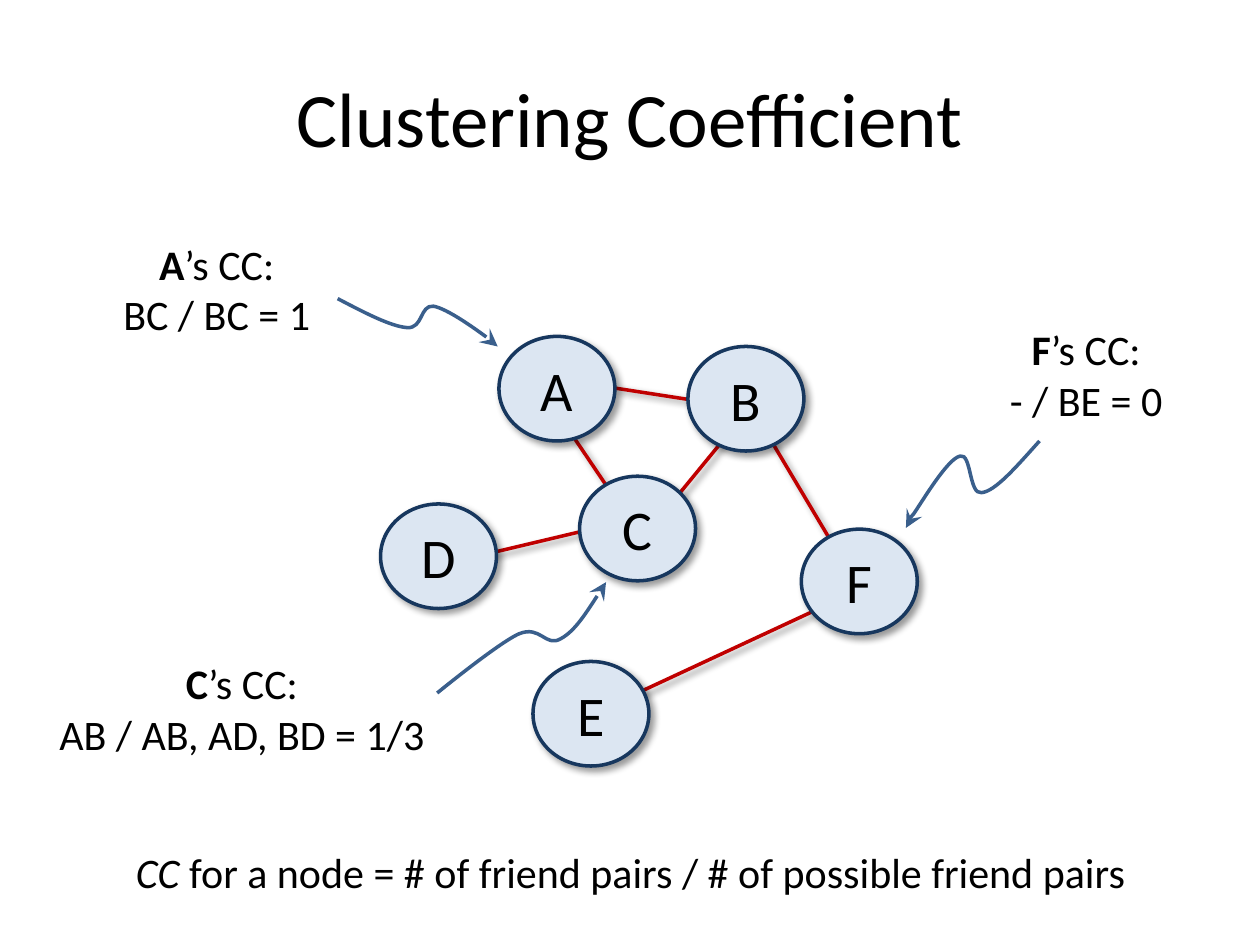
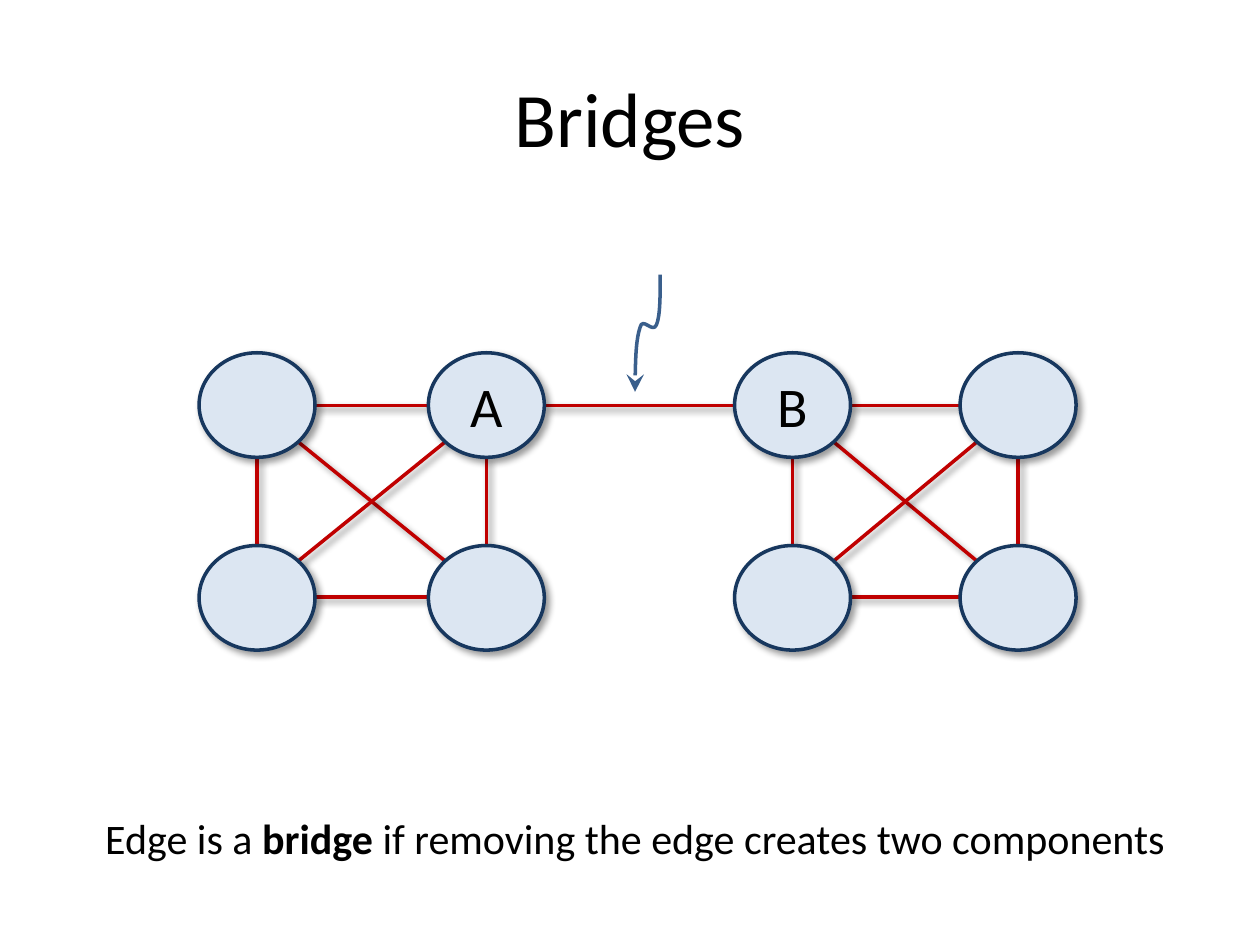
from dataclasses import dataclass
from itertools import combinations

from pptx import Presentation
from pptx.dml.color import RGBColor
from pptx.enum.shapes import MSO_CONNECTOR, MSO_SHAPE
from pptx.enum.text import MSO_ANCHOR, PP_ALIGN
from pptx.oxml import parse_xml
from pptx.oxml.ns import nsdecls, qn
from pptx.slide import Slide
from pptx.util import Pt

PX = 9144
SLIDE_WIDTH, SLIDE_HEIGHT = 1000, 750
NODE_WIDTH, NODE_HEIGHT = 92, 83
DIAGONAL = 0.707
FONT = "Calibri"
LINE_WIDTH = Pt(2)

WHITE = RGBColor(0xFF, 0xFF, 0xFF)
BLACK = RGBColor(0x00, 0x00, 0x00)
NODE_FILL = RGBColor(0xDC, 0xE6, 0xF2)
NODE_LINE = RGBColor(0x17, 0x37, 0x5E)
EDGE_RED = RGBColor(0xC0, 0x00, 0x00)
ARROW_BLUE = RGBColor(0x3A, 0x5F, 0x8C)

SHADOW_XML = (
    f'<a:effectLst {nsdecls("a")}>'
    '<a:outerShdw blurRad="50800" dist="38100" dir="2700000" algn="tl" rotWithShape="0">'
    '<a:srgbClr val="000000"><a:alpha val="40000"/></a:srgbClr>'
    "</a:outerShdw></a:effectLst>"
)

Point = tuple[int, int]


@dataclass(frozen=True)
class Box:
    left: int
    top: int
    width: int
    height: int

    def emu(self) -> tuple[int, int, int, int]:
        return self.left * PX, self.top * PX, self.width * PX, self.height * PX


@dataclass(frozen=True)
class Run:
    text: str
    bold: bool = False
    italic: bool = False


@dataclass(frozen=True)
class Node:
    left: int
    top: int
    label: str = ""


@dataclass(frozen=True)
class Edge:
    start: Point
    end: Point


@dataclass(frozen=True)
class Callout:
    name: str
    ratio: str
    box: Box
    arrow: list[Point]


TITLE_BOX = Box(50, 30, 900, 125)

FRIENDS = [
    Node(396, 267, "A"),
    Node(546, 275, "B"),
    Node(460, 378, "C"),
    Node(302, 400, "D"),
    Node(423, 525, "E"),
    Node(636, 420, "F"),
]
FRIENDSHIPS = [
    Edge((469, 420), (368, 444)),
    Edge((650, 483), (506, 550)),
    Edge((667, 442), (608, 343)),
    Edge((488, 308), (546, 317)),
    Edge((481, 385), (456, 348)),
    Edge((539, 392), (575, 348)),
]
CALLOUTS = [
    Callout("A", "BC / BC = 1", Box(47, 184, 250, 91), [
        (395, 275), (396, 274), (397, 274), (388, 269), (380, 263),
        (355, 245), (344, 243), (333, 242), (336, 261), (323, 260),
        (310, 259), (289, 248), (268, 237),
    ]),
    Callout("F", "- / BE = 0", Box(766, 252, 192, 91), [
        (719, 419), (718, 418), (717, 417), (725, 408), (732, 398),
        (752, 364), (762, 362), (771, 359), (769, 393), (779, 391),
        (790, 390), (807, 370), (825, 350),
    ]),
    Callout("C", "AB / AB, AD, BD = 1/3", Box(21, 517, 342, 91), [
        (481, 462), (469, 481), (456, 501), (445, 507), (433, 514),
        (429, 496), (412, 503), (396, 510), (347, 550), (347, 550),
    ]),
]

ROW_TOPS = (280, 433)
LEFT_CLIQUE = [Node(158, ROW_TOPS[0]), Node(340, ROW_TOPS[0], "A"),
               Node(158, ROW_TOPS[1]), Node(340, ROW_TOPS[1])]
RIGHT_CLIQUE = [Node(583, ROW_TOPS[0], "B"), Node(762, ROW_TOPS[0]),
                Node(583, ROW_TOPS[1]), Node(762, ROW_TOPS[1])]
BRIDGE_ARROW = [
    (504, 311), (504, 290), (505, 269), (508, 260), (510, 251),
    (518, 265), (521, 258), (524, 251), (524, 235), (524, 218),
]


def add_text(slide: Slide, box: Box, lines: list[list[Run]], size: int,
             anchor: MSO_ANCHOR = MSO_ANCHOR.TOP) -> None:
    frame = slide.shapes.add_textbox(*box.emu()).text_frame
    frame.word_wrap = True
    frame.vertical_anchor = anchor
    paragraph = frame.paragraphs[0]
    paragraph.alignment = PP_ALIGN.CENTER
    paragraph.font.name = FONT
    paragraph.font.size = Pt(size)
    paragraph.font.color.rgb = BLACK
    for index, line in enumerate(lines):
        if index:
            paragraph.add_line_break()
        for part in line:
            run = paragraph.add_run()
            run.text = part.text
            run.font.bold = part.bold
            run.font.italic = part.italic
    for line_break in paragraph._p.findall(qn("a:br")):
        line_break.insert(0, parse_xml(f'<a:rPr {nsdecls("a")} sz="{size * 100}"/>'))


def add_node(slide: Slide, node: Node) -> None:
    box = Box(node.left, node.top, NODE_WIDTH, NODE_HEIGHT)
    shape = slide.shapes.add_shape(MSO_SHAPE.OVAL, *box.emu())
    shape.fill.solid()
    shape.fill.fore_color.rgb = NODE_FILL
    shape.line.color.rgb = NODE_LINE
    shape.line.width = LINE_WIDTH
    shape.element.spPr.append(parse_xml(SHADOW_XML))
    if node.label:
        shape.text_frame.vertical_anchor = MSO_ANCHOR.MIDDLE
        paragraph = shape.text_frame.paragraphs[0]
        paragraph.text = node.label
        paragraph.alignment = PP_ALIGN.CENTER
        paragraph.font.name = FONT
        paragraph.font.size = Pt(32)
        paragraph.font.color.rgb = BLACK


def add_edge(slide: Slide, edge: Edge) -> None:
    ends = [value * PX for value in (*edge.start, *edge.end)]
    connector = slide.shapes.add_connector(MSO_CONNECTOR.STRAIGHT, *ends)
    connector.line.color.rgb = EDGE_RED
    connector.line.width = LINE_WIDTH
    connector.element.spPr.append(parse_xml(SHADOW_XML))


def add_curved_arrow(slide: Slide, points: list[Point]) -> None:
    builder = slide.shapes.build_freeform(*points[0], scale=PX)
    builder.add_line_segments(points[1:], close=False)
    shape = builder.convert_to_shape()
    shape.fill.background()
    shape.line.color.rgb = ARROW_BLUE
    shape.line.width = LINE_WIDTH
    shape.shadow.inherit = False
    outline = shape.element.spPr.find(".//" + qn("a:path"))
    segments = outline.findall(qn("a:lnTo"))
    for first in range(0, len(segments), 3):
        curve = parse_xml(f'<a:cubicBezTo {nsdecls("a")}/>')
        for segment in segments[first:first + 3]:
            curve.append(segment[0])
            outline.remove(segment)
        outline.append(curve)
    shape.line._get_or_add_ln().append(
        parse_xml(f'<a:headEnd {nsdecls("a")} type="stealth" w="lg" len="lg"/>'))


def rim_point(node: Node, toward: Node) -> Point:
    step_x = (toward.left > node.left) - (toward.left < node.left)
    step_y = (toward.top > node.top) - (toward.top < node.top)
    reach = DIAGONAL if step_x and step_y else 1
    return (round(node.left + NODE_WIDTH / 2 * (1 + step_x * reach)),
            round(node.top + NODE_HEIGHT / 2 * (1 + step_y * reach)))


def join(first: Node, second: Node) -> Edge:
    return Edge(rim_point(first, second), rim_point(second, first))


def add_graph(slide: Slide, nodes: list[Node], edges: list[Edge]) -> None:
    for edge in edges:
        add_edge(slide, edge)
    for node in nodes:
        add_node(slide, node)


def add_titled_slide(presentation: Presentation, title: str) -> Slide:
    slide = presentation.slides.add_slide(presentation.slide_layouts[6])
    slide.background.fill.solid()
    slide.background.fill.fore_color.rgb = WHITE
    add_text(slide, TITLE_BOX, [[Run(title)]], 44, MSO_ANCHOR.MIDDLE)
    return slide


def build_clustering_slide(presentation: Presentation) -> None:
    slide = add_titled_slide(presentation, "Clustering Coefficient")
    add_graph(slide, FRIENDS, FRIENDSHIPS)
    for callout in CALLOUTS:
        lines = [[Run(callout.name, bold=True), Run("’s CC:")], [Run(callout.ratio)]]
        add_text(slide, callout.box, lines, 24)
        add_curved_arrow(slide, callout.arrow)
    definition = [
        Run("CC", italic=True),
        Run(" for a node = # of friend pairs / # of possible friend pairs"),
    ]
    add_text(slide, Box(92, 667, 817, 50), [definition], 24)


def build_bridges_slide(presentation: Presentation) -> None:
    slide = add_titled_slide(presentation, "Bridges")
    cliques = (LEFT_CLIQUE, RIGHT_CLIQUE)
    edges = [join(*pair) for clique in cliques for pair in combinations(clique, 2)]
    bridge = join(LEFT_CLIQUE[1], RIGHT_CLIQUE[0])
    add_graph(slide, LEFT_CLIQUE + RIGHT_CLIQUE, edges + [bridge])
    definition = [
        Run("Edge is a "),
        Run("bridge", bold=True),
        Run(" if removing the edge creates two components"),
    ]
    add_text(slide, Box(58, 640, 892, 50), [definition], 24)
    add_curved_arrow(slide, BRIDGE_ARROW)


def main() -> None:
    presentation = Presentation()
    presentation.slide_width = SLIDE_WIDTH * PX
    presentation.slide_height = SLIDE_HEIGHT * PX
    build_clustering_slide(presentation)
    build_bridges_slide(presentation)
    presentation.save("out.pptx")


if __name__ == "__main__":
    main()
